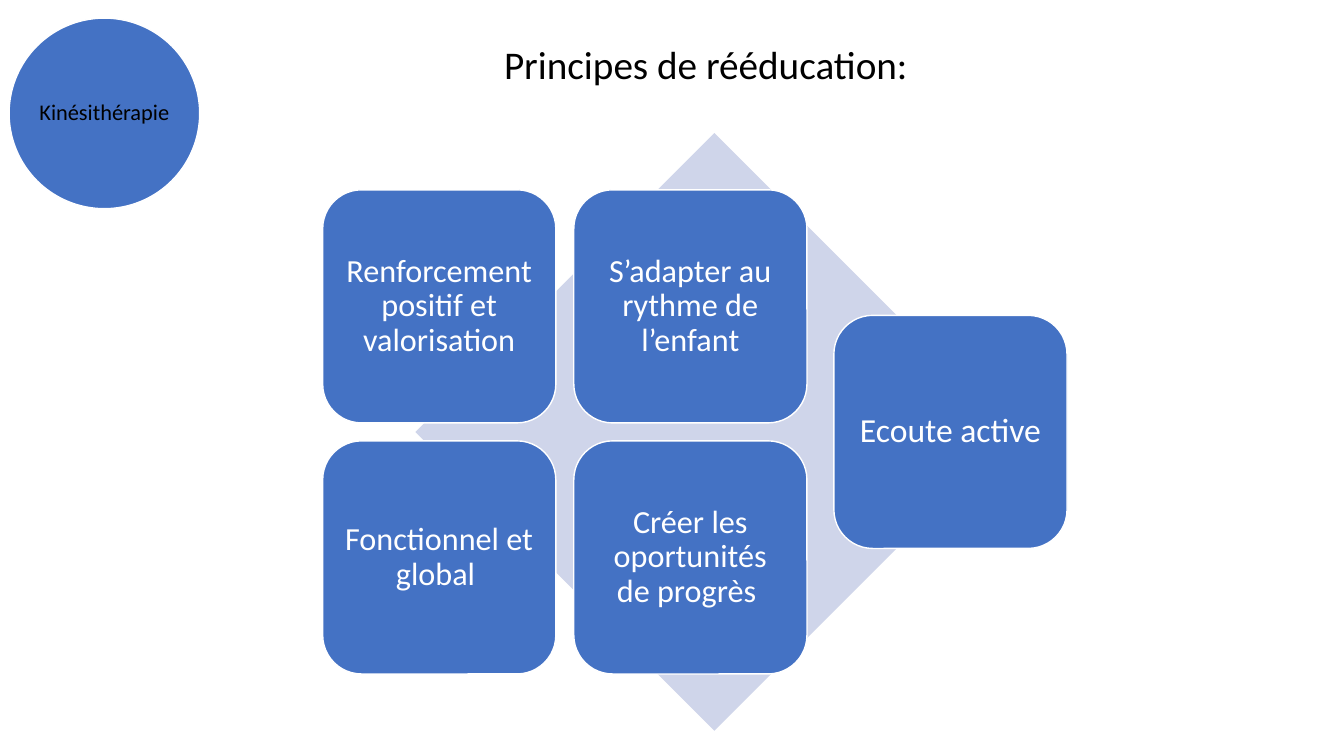
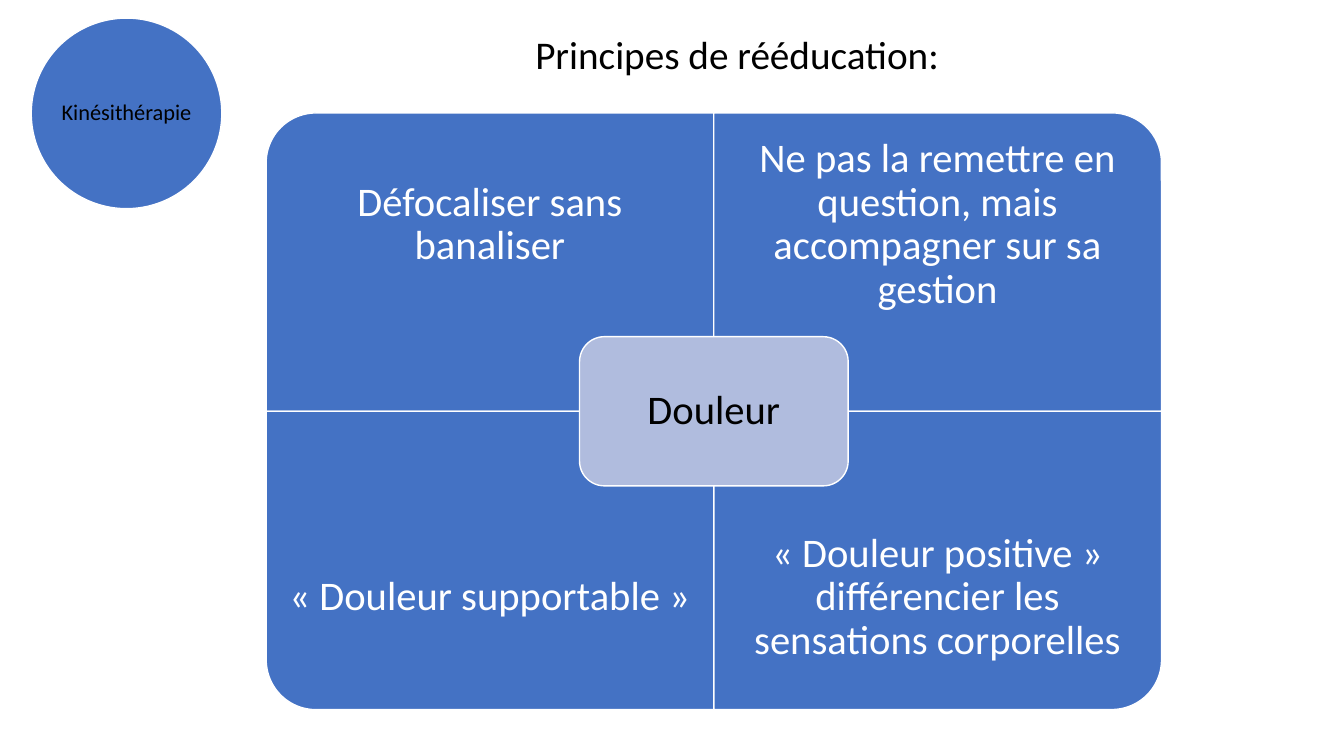
"""Build two slides on the principles of rehabilitation."""
from pptx import Presentation
from pptx.dml.color import RGBColor
from pptx.enum.shapes import MSO_SHAPE as SHAPE
from pptx.enum.text import MSO_ANCHOR, PP_ALIGN
from pptx.util import Inches, Pt

WIDE, HIGH = 13.33, 7.5
BLUE, WHITE, BLACK = "4472C4", "FFFFFF", "000000"
PALE, SOFT = "CFD5EA", "B0BCDE"
FONT = "Calibri"
TITLE = "Principes de rééducation:"
BADGE = "Kinésithérapie"

TILES = [
    (-0.155, 0.095, "Renforcement positif et valorisation", 23),
    (0.265, 0.095, "S’adapter au rythme de l’enfant", 23),
    (-0.155, 0.515, "Fonctionnel et global ", 23),
    (0.265, 0.515, "Créer les oportunités de progrès ", 23),
    (0.7, 0.305, "Ecoute active", 24),
]
PARTS = [
    (270, "Défocaliser sans banaliser"),
    (0, "Ne pas la remettre en question, mais accompagner sur sa gestion"),
    (180, "« Douleur supportable »"),
    (90, "« Douleur positive » différencier les sensations corporelles"),
]


def tint(code):
    """Turn a hex string into a colour."""
    return RGBColor.from_string(code)


def inner(box, x, y, w, h):
    """Return the part of a box given by shares of its size."""
    left, top, wide, high = box
    return left + x * wide, top + y * high, w * wide, h * high


def apply(item, style):
    """Set each attribute of an item from a dict."""
    for name, value in style.items():
        setattr(item, name, value)


def write(shape, text, size, color=WHITE, inset=0.1, lead=0.9, anchor=MSO_ANCHOR.MIDDLE):
    """Put centred text into a shape."""
    frame = shape.text_frame
    sides = ("margin_left", "margin_top", "margin_right", "margin_bottom")
    apply(frame, dict.fromkeys(sides, Inches(inset)))
    apply(frame, {"word_wrap": True, "vertical_anchor": anchor})
    line = frame.paragraphs[0]
    apply(line, {"alignment": PP_ALIGN.CENTER, "line_spacing": lead})
    run = line.add_run()
    run.text = text
    apply(run.font, {"name": FONT, "size": Pt(size)})
    run.font.color.rgb = tint(color)


def draw(slide, kind, box, fill=BLUE, edge=WHITE, turn=0):
    """Add a filled shape, outlined if it has an edge colour."""
    shape = slide.shapes.add_shape(kind, *map(Inches, box))
    shape.shadow.inherit = False
    shape.rotation = turn
    shape.fill.solid()
    shape.fill.fore_color.rgb = tint(fill)
    if edge:
        shape.line.color.rgb = tint(edge)
        shape.line.width = Pt(1)
    else:
        shape.line.fill.background()
    return shape


def label(slide, box):
    """Add an empty text box."""
    return slide.shapes.add_textbox(*map(Inches, box))


def head(slide, badge, title):
    """Place the round badge and the title on a slide."""
    disc = draw(slide, SHAPE.OVAL, badge)
    write(disc, BADGE, 16, BLACK, inset=0.02)
    write(label(slide, title), TITLE, 28, BLACK, inset=0.05, lead=1.0,
          anchor=MSO_ANCHOR.TOP)


def matrix(slide, box):
    """Place the tiles over a diamond that fills the box."""
    draw(slide, SHAPE.DIAMOND, box, PALE, None)
    for x, y, text, size in TILES:
        tile = draw(slide, SHAPE.ROUNDED_RECTANGLE, inner(box, x, y, 0.39, 0.39))
        write(tile, text, size)


def quarters(slide, box):
    """Place four quarters and a centre plate in the box."""
    for index, (turn, text) in enumerate(PARTS):
        row, col = divmod(index, 2)
        cell = inner(box, col / 2, row / 2, 0.5, 0.5)
        left, top, wide, high = cell
        if turn % 180:
            shift = (wide - high) / 2
            area = left + shift, top - shift, high, wide
        else:
            area = cell
        draw(slide, SHAPE.ROUND_1_RECTANGLE, area, turn=turn)
        write(label(slide, inner(cell, 0, row / 4, 1, 0.75)), text, 29, inset=0.23)
    plate = draw(slide, SHAPE.ROUNDED_RECTANGLE,
                 inner(box, 0.35, 0.375, 0.3, 0.25), SOFT)
    write(plate, "Douleur", 29, BLACK, inset=0.12)


def main():
    """Build and save the slides."""
    deck = Presentation()
    apply(deck, {"slide_width": Inches(WIDE), "slide_height": Inches(HIGH)})
    pages = [
        (0.09, (4.08, 0.35), matrix, (4.12, 1.32, 5.93, 5.93)),
        (0.31, (4.39, 0.25), quarters, (2.64, 1.12, 8.88, 5.92)),
    ]
    for left, spot, body, box in pages:
        slide = deck.slides.add_slide(deck.slide_layouts[6])
        head(slide, (left, 0.18, 1.89, 1.89), (*spot, 5.84, 0.57))
        body(slide, box)
    deck.save("out.pptx")


if __name__ == "__main__":
    main()
